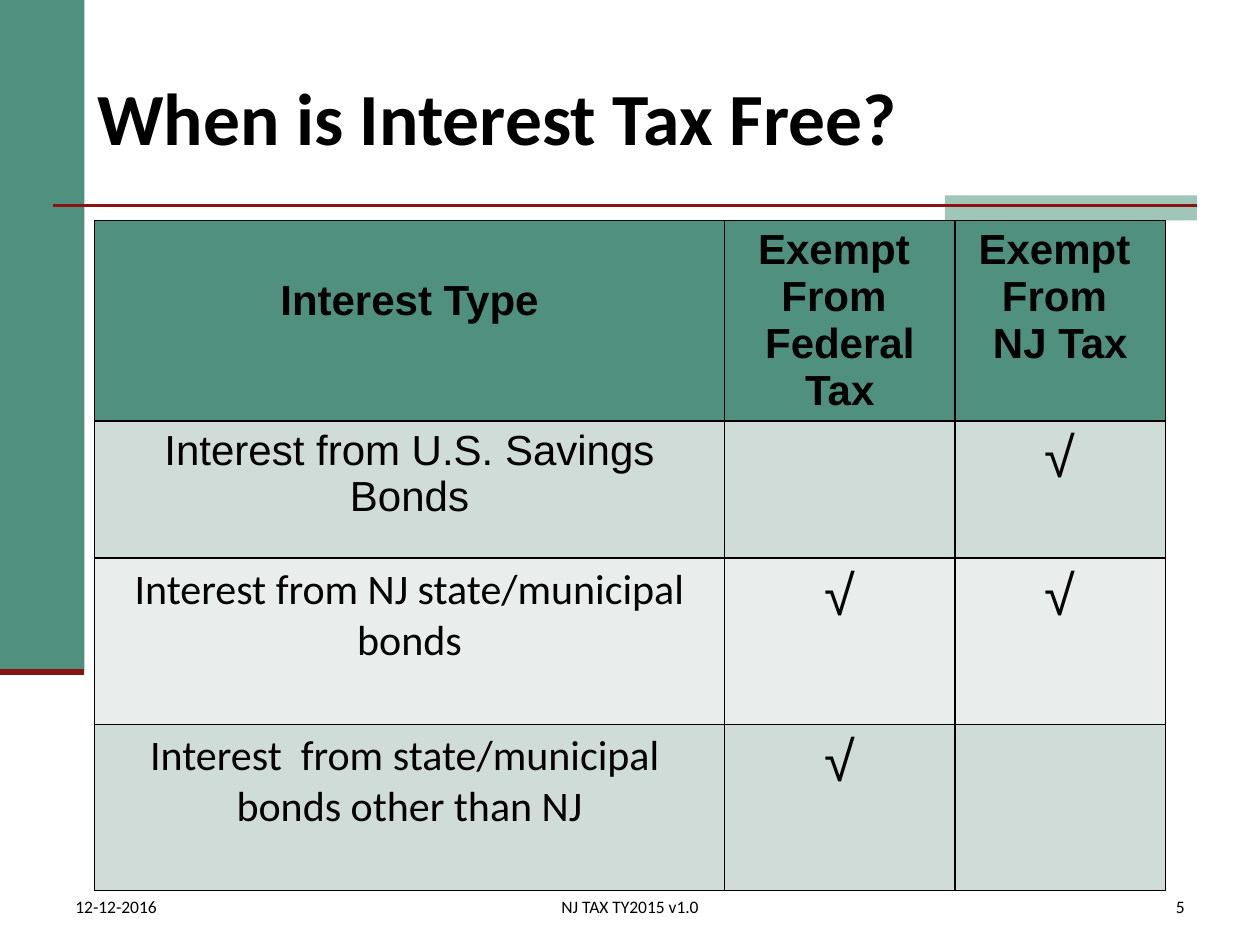
from lxml import etree
from pptx import Presentation
from pptx import util as u
from pptx.dml.color import RGBColor
from pptx.enum import shapes, text
from pptx.oxml.ns import qn

GREEN = RGBColor(0x4F, 0x91, 0x7E)
MINT = RGBColor(0xA0, 0xC6, 0xBA)
RED = RGBColor(0x89, 0x14, 0x11)
BLACK = RGBColor(0, 0, 0)
DARK = RGBColor(0xD0, 0xDC, 0xD8)
LIGHT = RGBColor(0xE9, 0xEE, 0xEC)
LEFT, MID, RIGHT = text.PP_ALIGN.LEFT, text.PP_ALIGN.CENTER, text.PP_ALIGN.RIGHT


class Deck:
    """Holds the style and the current slide."""
    body, head = "Calibri", "Arial"

    def __init__(self):
        self.prs = Presentation()
        self.prs.slide_width, self.prs.slide_height = u.Inches(10), u.Inches(7.5)
        self.slide = self.prs.slides.add_slide(self.prs.slide_layouts[5])

    def words(self, frame, lines, size, font, align=LEFT, bold=False):
        for i, line in enumerate(lines):
            para = frame.paragraphs[0] if i == 0 else frame.add_paragraph()
            para.alignment = align
            run = para.add_run()
            run.text = line
            run.font.size, run.font.name = u.Pt(size), font
            run.font.bold, run.font.color.rgb = bold, BLACK

    def title(self, line, *box):
        shape = self.slide.shapes.title
        shape.left, shape.top, shape.width, shape.height = map(u.Inches, box)
        frame = shape.text_frame
        frame.vertical_anchor = text.MSO_ANCHOR.MIDDLE
        self.words(frame, [line], 42, self.body, bold=True)

    def rect(self, fill, *box):
        shape = self.slide.shapes.add_shape(
            shapes.MSO_SHAPE.RECTANGLE, *map(u.Inches, box))
        shape.fill.solid()
        shape.fill.fore_color.rgb = fill
        shape.line.fill.background()
        shape.shadow.inherit = False

    def rule(self, left, right, top, width):
        line = self.slide.shapes.add_connector(
            shapes.MSO_CONNECTOR.STRAIGHT,
            *map(u.Inches, (left, top, right, top)))
        line.line.color.rgb, line.line.width = RED, u.Pt(width)
        etree.SubElement(line._element.spPr, qn("a:effectLst"))

    def note(self, line, left, width, align):
        box = self.slide.shapes.add_textbox(
            *map(u.Inches, (left, 7, width, 0.33)))
        frame = box.text_frame
        frame.word_wrap = True
        frame.vertical_anchor = text.MSO_ANCHOR.BOTTOM
        self.words(frame, [line], 10, self.body, align)

    def table(self, left, top, cols, rows):
        frame = self.slide.shapes.add_table(
            len(rows), len(cols),
            *map(u.Inches, (left, top, sum(cols), sum(rows))))
        table = frame.table
        table.first_row = table.horz_banding = False
        for col, width in zip(table.columns, cols):
            col.width = u.Inches(width)
        for row, height in zip(table.rows, rows):
            row.height = u.Inches(height)
        return table

    def cell(self, cell, fill, lines, size, font, bold=False):
        self.words(cell.text_frame, lines, size, font, MID, bold)
        props = cell._tc.get_or_add_tcPr()
        for side in ("lnL", "lnR", "lnT", "lnB"):
            edge = etree.SubElement(props, qn("a:" + side), w=str(u.Pt(1)))
            paint = etree.SubElement(edge, qn("a:solidFill"))
            etree.SubElement(paint, qn("a:srgbClr"), val=str(BLACK))
        cell.fill.solid()
        cell.fill.fore_color.rgb = fill


def main():
    deck = Deck()

    # Side band, accent and rules
    deck.rect(GREEN, 0, 0, 0.67, 5.33)
    deck.rect(MINT, 7.5, 1.55, 2, 0.2)
    deck.rule(0.42, 9.5, 1.63, 1.5)
    deck.rule(0, 0.67, 5.33, 3.5)

    deck.title("When is Interest Tax Free?", 0.67, 0.3, 8.83, 1.25)

    # Table head
    table = deck.table(0.75, 1.75, [5, 1.83, 1.67], [1.59, 1.09, 1.32, 1.32])
    heads = [["Interest Type"],
             ["Exempt ", "From ", "Federal Tax"],
             ["Exempt ", "From ", "NJ Tax"]]
    for col, lines in enumerate(heads):
        deck.cell(table.cell(0, col), GREEN, lines, 24, deck.head, True)
    table.cell(0, 0).margin_top = u.Inches(0.45)

    # Table body: label, font, fill, exempt from federal tax, from NJ tax
    rows = [
        ("Interest from U.S. Savings Bonds", deck.head, DARK, False, True),
        ("Interest from NJ state/municipal bonds", deck.body, LIGHT, True, True),
        ("Interest  from state/municipal  bonds other than NJ",
         deck.body, DARK, True, False),
    ]
    for row, (label, font, fill, *marks) in enumerate(rows, 1):
        deck.cell(table.cell(row, 0), fill, [label], 24, font)
        for col, mark in enumerate(marks, 1):
            deck.cell(table.cell(row, col), fill, ["√"] if mark else [],
                      32, deck.head)

    # Footer
    deck.note("12-12-2016", 0.5, 2.17, LEFT)
    deck.note("NJ TAX TY2015 v1.0", 3.31, 3.38, MID)
    deck.note("5", 7.42, 2.08, RIGHT)

    deck.prs.save("out.pptx")


if __name__ == "__main__":
    main()
